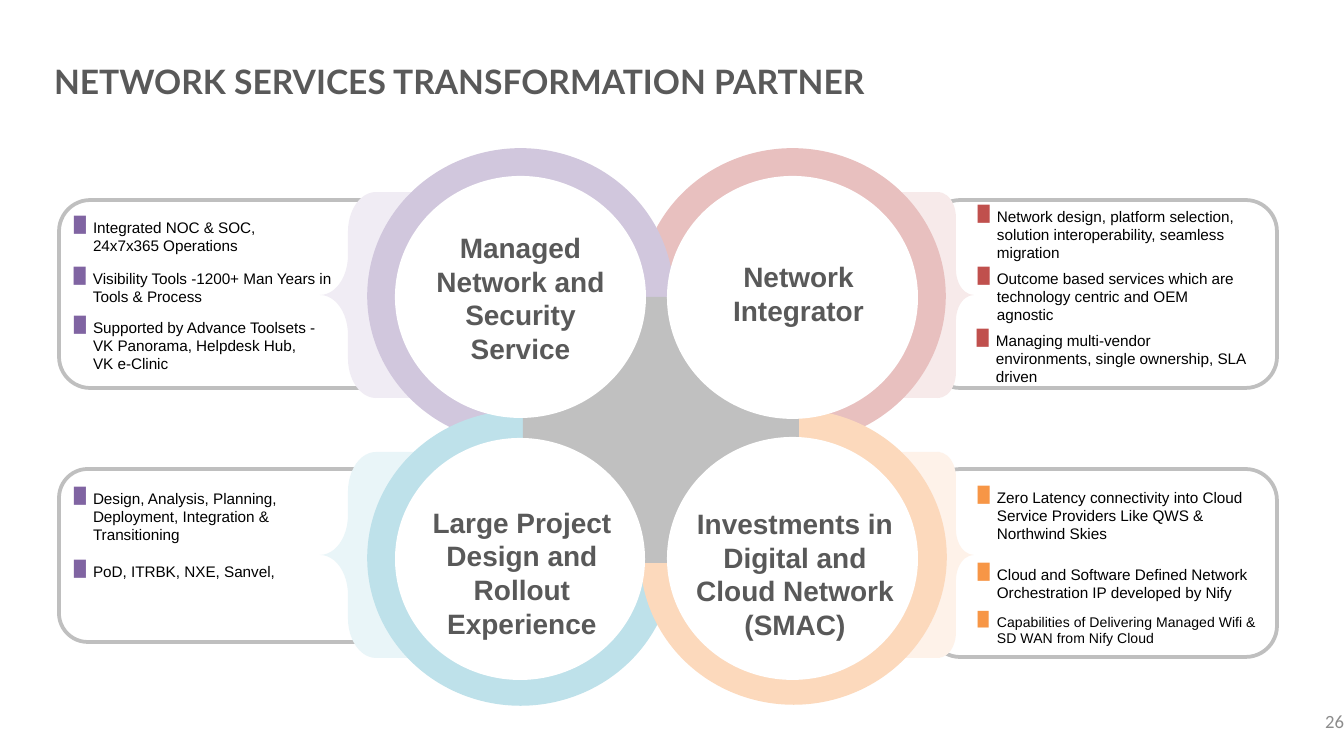
from dataclasses import dataclass

from lxml.etree import SubElement
from pptx import Presentation
from pptx.dml.color import RGBColor
from pptx.enum.shapes import MSO_SHAPE
from pptx.enum.text import MSO_ANCHOR, MSO_AUTO_SIZE, PP_ALIGN
from pptx.oxml.ns import qn
from pptx.util import Emu, Pt

EMU_PER_PX = 914400 / 134.4
GREY_TEXT = "595959"
PURPLE, RED, ORANGE = "8064A2", "C0504D", "F79646"
BULLET_INDENT = 19
POD_WIDTH, POD_HEIGHT = 95, 206
RING_SIZE = (273, 262)

Box = tuple[int, int, int, int]


@dataclass(frozen=True)
class Quadrant:
    """One ring with its label, its side pod and its outlined card."""
    label: str
    label_box: Box
    card: Box
    on_left: bool
    pod_top: int
    ring_at: tuple[int, int]
    disc: Box
    ring_colour: str
    pod_colour: str


@dataclass(frozen=True)
class Note:
    text: str
    size: float = 8.2
    space_before: float = 0


@dataclass(frozen=True)
class NoteBox:
    box: Box
    bullet_colour: str
    notes: tuple[Note, ...]


# Listed in stacking order: each ring overlaps the one before it.
QUADRANTS = [
    Quadrant("Network Integrator", (691, 214, 215, 159), (929, 200, 348, 188),
             False, 192, (656, 165), (667, 176, 251, 243), "E8C0BF", "F7EAEA"),
    Quadrant("Managed Network and Security Service", (421, 206, 199, 184),
             (59, 200, 359, 188),
             True, 192, (384, 165), (395, 176, 251, 242), "D1C7DD", "F0ECF4"),
    Quadrant("Large Project Design and Rollout Experience",
             (405, 493, 234, 159), (59, 469, 375, 173),
             True, 452, (384, 427), (395, 438, 250, 242), "BEE1EA", "E9F5F8"),
    Quadrant("Investments in Digital and Cloud Network (SMAC)",
             (684, 500, 222, 148), (929, 469, 348, 188),
             False, 452, (657, 426), (667, 437, 251, 243), "FCD9BC", "FEF2E9"),
]

NOTE_BOXES = [
    NoteBox((74, 218, 246, 56), PURPLE, (
        Note("Integrated NOC & SOC, 24x7x365 Operations"),)),
    NoteBox((74, 269, 269, 38), PURPLE, (
        Note("Visibility Tools -1200+ Man Years in Tools & Process"),)),
    NoteBox((74, 318, 246, 56), PURPLE, (
        Note("Supported by Advance Toolsets - VK Panorama, Helpdesk Hub, VK e-Clinic"),)),
    NoteBox((74, 489, 273, 93), PURPLE, (
        Note("Design, Analysis, Planning, Deployment, Integration & Transitioning"),
        Note("PoD, ITRBK, NXE, Sanvel,", space_before=9.5))),
    NoteBox((978, 207, 290, 56), RED, (
        Note("Network design, platform selection, solution interoperability, seamless migration"),)),
    NoteBox((978, 269, 269, 56), RED, (
        Note("Outcome based services which are technology centric and OEM agnostic"),)),
    NoteBox((977, 331, 269, 56), RED, (
        Note("Managing multi-vendor environments, single ownership, SLA driven"),)),
    NoteBox((978, 488, 290, 176), ORANGE, (
        Note("Zero Latency connectivity into Cloud Service Providers Like QWS & Northwind Skies"),
        Note("Capabilities of Delivering Managed Wifi & SD WAN from Nify Cloud",
             size=7.5, space_before=37.5))),
    NoteBox((978, 565, 278, 56), ORANGE, (
        Note("Cloud and Software Defined Network Orchestration IP developed by Nify"),)),
]


def px(length: int) -> Emu:
    return Emu(round(length * EMU_PER_PX))


def colour(hex_code: str) -> RGBColor:
    return RGBColor.from_string(hex_code)


def add_shape(slide, kind, box: Box, fill: str | None = None,
              line: str | None = None, line_width: float = 0):
    shape = slide.shapes.add_shape(kind, *map(px, box))
    shape.shadow.inherit = False
    if fill:
        shape.fill.solid()
        shape.fill.fore_color.rgb = colour(fill)
    else:
        shape.fill.background()
    if line:
        shape.line.color.rgb = colour(line)
        shape.line.width = Pt(line_width)
    else:
        shape.line.fill.background()
    return shape


def add_text_frame(slide, box: Box, anchor=MSO_ANCHOR.MIDDLE):
    """Add a wrapping text box without margins and return its frame."""
    frame = slide.shapes.add_textbox(*map(px, box)).text_frame
    frame.word_wrap = True
    frame.vertical_anchor = anchor
    frame.margin_left = frame.margin_right = 0
    frame.margin_top = frame.margin_bottom = 0
    return frame


def format_runs(paragraph, font_name: str, size: float, hex_code: str,
                bold: bool = False) -> None:
    for run in paragraph.runs:
        run.font.name = font_name
        run.font.size = Pt(size)
        run.font.bold = bold
        run.font.color.rgb = colour(hex_code)


def add_line_of_text(slide, text: str, box: Box, font_name: str, size: float,
                     hex_code: str, align, bold: bool = False) -> None:
    paragraph = add_text_frame(slide, box).paragraphs[0]
    paragraph.text = text
    paragraph.alignment = align
    format_runs(paragraph, font_name, size, hex_code, bold)


def add_bullet(paragraph, hex_code: str) -> None:
    properties = paragraph._p.get_or_add_pPr()
    properties.set("marL", str(px(BULLET_INDENT)))
    properties.set("indent", str(-px(BULLET_INDENT)))
    bullet_colour = SubElement(properties, qn("a:buClr"))
    SubElement(bullet_colour, qn("a:srgbClr"), val=hex_code)
    SubElement(properties, qn("a:buChar"), char="█")


def add_notes(slide, note_box: NoteBox) -> None:
    frame = add_text_frame(slide, note_box.box, MSO_ANCHOR.TOP)
    frame.auto_size = MSO_AUTO_SIZE.SHAPE_TO_FIT_TEXT
    for index, note in enumerate(note_box.notes):
        paragraph = frame.add_paragraph() if index else frame.paragraphs[0]
        paragraph.text = note.text
        add_bullet(paragraph, note_box.bullet_colour)
        if note.space_before:
            paragraph.space_before = Pt(note.space_before)
        format_runs(paragraph, "Arial", note.size, "000000")


def add_pod(slide, quadrant: Quadrant) -> None:
    """Add the tinted block beside a ring, with a brace pointing at the card."""
    if quadrant.on_left:
        block_left, brace, brace_left, brace_width = 376, MSO_SHAPE.LEFT_BRACE, 320, 56
    else:
        block_left, brace, brace_left, brace_width = 845, MSO_SHAPE.RIGHT_BRACE, 938, 36
    top, tint = quadrant.pod_top, quadrant.pod_colour
    add_shape(slide, MSO_SHAPE.RECTANGLE, (block_left, top, POD_WIDTH, POD_HEIGHT), tint)
    shape = add_shape(slide, brace, (brace_left, top, brace_width, POD_HEIGHT), tint)
    shape.adjustments[0] = 0.71
    shape.adjustments[1] = 0.5


def main() -> None:
    presentation = Presentation()
    presentation.slide_width, presentation.slide_height = px(1344), px(756)
    slide = presentation.slides.add_slide(presentation.slide_layouts[6])

    add_line_of_text(slide, "NETWORK SERVICES TRANSFORMATION PARTNER", (54, 54, 1107, 54),
                     "Lato", 18, GREY_TEXT, PP_ALIGN.LEFT, bold=True)
    add_line_of_text(slide, "26", (1042, 701, 302, 40), "Calibri", 10, "8C8C8C",
                     PP_ALIGN.RIGHT)

    for quadrant in QUADRANTS:
        add_shape(slide, MSO_SHAPE.ROUNDED_RECTANGLE, quadrant.card, line="BFBFBF", line_width=2)
    for quadrant in QUADRANTS:
        add_pod(slide, quadrant)
    for quadrant in QUADRANTS:
        add_shape(slide, MSO_SHAPE.OVAL, quadrant.ring_at + RING_SIZE,
                  quadrant.ring_colour, quadrant.ring_colour, 18)
    add_shape(slide, MSO_SHAPE.RECTANGLE, (523, 297, 276, 266), "C0C0C0")
    for quadrant in QUADRANTS:
        add_shape(slide, MSO_SHAPE.OVAL, quadrant.disc, "FFFFFF")
    for quadrant in QUADRANTS:
        add_line_of_text(slide, quadrant.label, quadrant.label_box, "Arial", 15,
                         GREY_TEXT, PP_ALIGN.CENTER, bold=True)
    for note_box in NOTE_BOXES:
        add_notes(slide, note_box)

    presentation.save("out.pptx")


if __name__ == "__main__":
    main()
